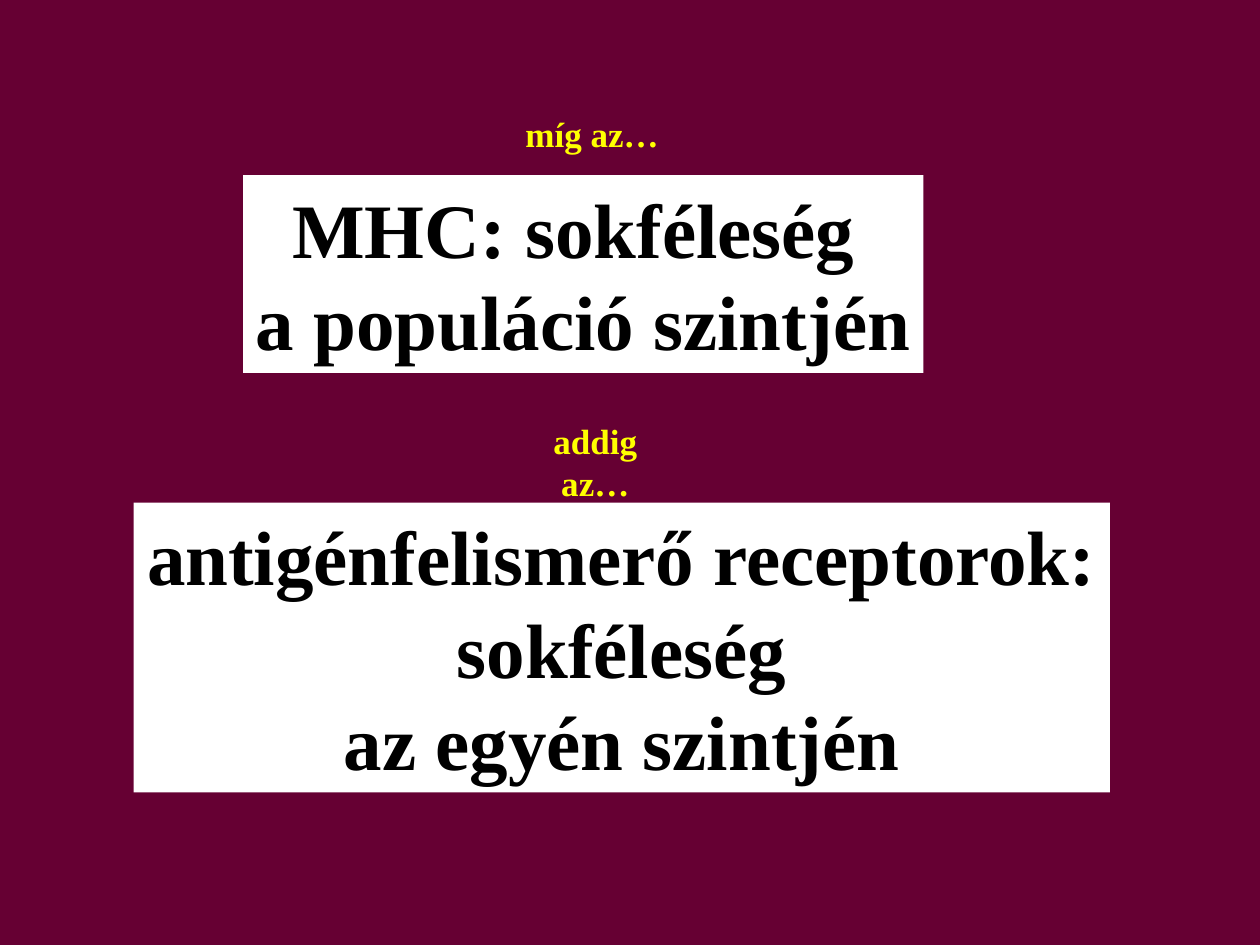
from pptx import Presentation
from pptx.dml.color import RGBColor
from pptx.enum import shapes, text
from pptx.util import Inches, Pt

COLORS = {"back": "660033", "panel": "FFFFFF", "ink": "000000", "link": "FFFF00"}


class SlideBuilder:
    font = "Times New Roman"
    panel_size = 44
    link_size = 20

    def __init__(self, page):
        self.page = page

    def background(self):
        fill = self.page.background.fill
        fill.solid()
        fill.fore_color.rgb = RGBColor.from_string(COLORS["back"])

    def add_lines(self, box, lines, size, color):
        frame = box.text_frame
        frame.word_wrap = False
        frame.auto_size = text.MSO_AUTO_SIZE.SHAPE_TO_FIT_TEXT
        frame.vertical_anchor = text.MSO_ANCHOR.TOP
        for index, line in enumerate(lines):
            para = frame.add_paragraph() if index else frame.paragraphs[0]
            para.alignment = text.PP_ALIGN.CENTER
            span = para.add_run()
            span.text = line
            span.font.name = self.font
            span.font.size = Pt(size)
            span.font.bold = True
            span.font.color.rgb = RGBColor.from_string(COLORS[color])

    def panel(self, left, top, width, height, lines):
        box = self.page.shapes.add_shape(
            shapes.MSO_SHAPE.RECTANGLE,
            Inches(left), Inches(top), Inches(width), Inches(height))
        box.shadow.inherit = False
        box.fill.solid()
        box.fill.fore_color.rgb = RGBColor.from_string(COLORS["panel"])
        box.line.fill.background()
        self.add_lines(box, lines, self.panel_size, "ink")

    def link_phrase(self, left, top, width, phrase):
        box = self.page.shapes.add_textbox(
            Inches(left), Inches(top), Inches(width), Inches(0.43))
        self.add_lines(box, [phrase], self.link_size, "link")


def main():
    deck = Presentation()
    deck.slide_width, deck.slide_height = Inches(10), Inches(7.5)
    builder = SlideBuilder(deck.slides.add_slide(deck.slide_layouts[6]))
    builder.background()

    # The two statements being contrasted
    builder.panel(1.93, 1.39, 5.4, 1.57,
                  ["MHC: sokféleség ", "a populáció szintjén"])
    builder.panel(1.06, 3.99, 7.75, 2.3,
                  ["antigénfelismerő receptorok:", " sokféleség ", "az egyén szintjén"])

    # Linking phrases above each statement
    builder.link_phrase(4.07, 0.84, 1.26, "míg az…")
    builder.link_phrase(3.99, 3.28, 1.47, "addig az…")

    deck.save("out.pptx")


if __name__ == "__main__":
    main()
